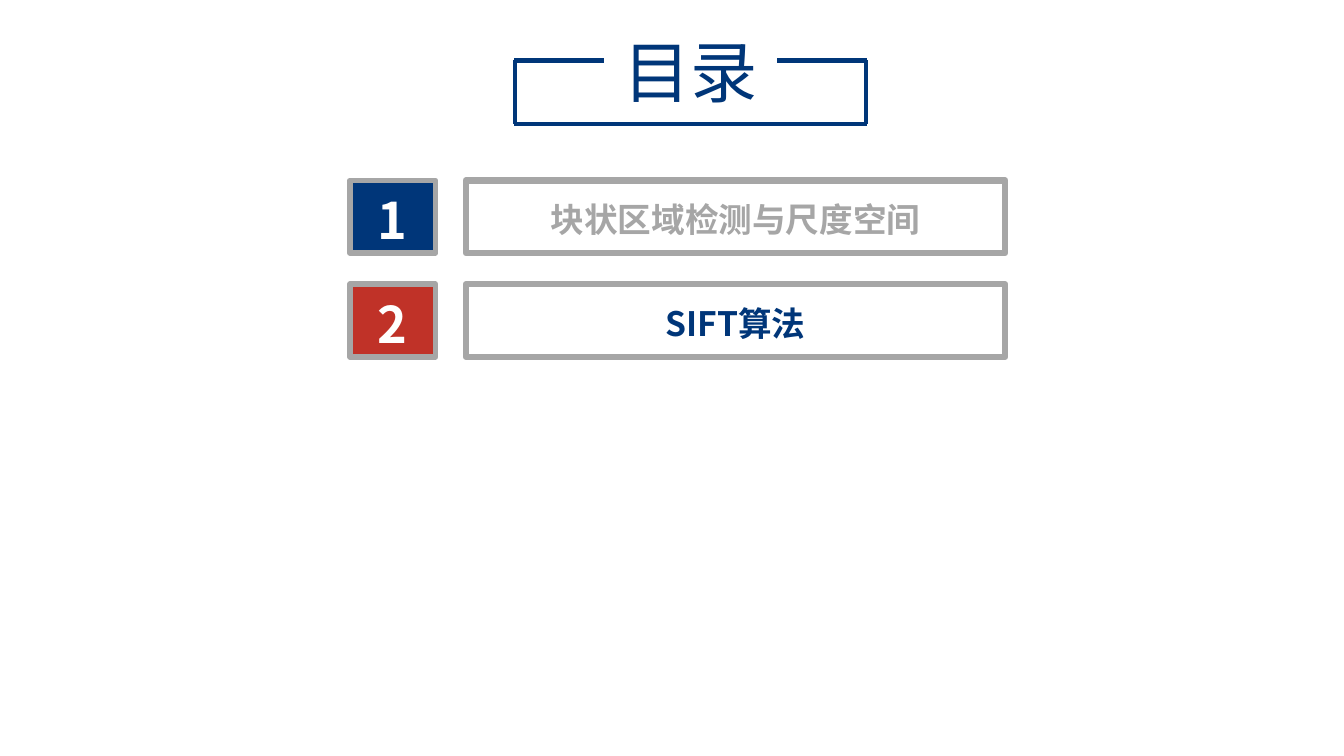
from pptx import Presentation
from pptx.dml.color import RGBColor
from pptx.enum.shapes import MSO_CONNECTOR, MSO_SHAPE
from pptx.enum.text import MSO_ANCHOR, PP_ALIGN
from pptx.oxml.ns import qn
from pptx.util import Pt

PX = 9144
FONT = "Noto Sans CJK SC"
NAVY = RGBColor(0x00, 0x36, 0x79)
RED = RGBColor(0xC0, 0x32, 0x28)
GRAY = RGBColor(0xA6, 0xA6, 0xA6)
WHITE = RGBColor(0xFF, 0xFF, 0xFF)
RECT = MSO_SHAPE.RECTANGLE
STRAIGHT = MSO_CONNECTOR.STRAIGHT
CENTER = PP_ALIGN.CENTER
MIDDLE = MSO_ANCHOR.MIDDLE

ENTRIES = [
    ("1", "块状区域检测与尺度空间", NAVY, GRAY),
    ("2", "SIFT算法", RED, NAVY),
]


def px(*lengths):
    """Turn pixel lengths into EMU."""
    return [n * PX for n in lengths]


def write(sp, text, size, color, bold=False, spacing=1.0):
    """Fill a shape with one centred line of text."""
    tf = sp.text_frame
    tf.word_wrap = True
    tf.vertical_anchor = MIDDLE
    tf.margin_top = tf.margin_bottom = 0
    p = tf.paragraphs[0]
    p.alignment = CENTER
    p.line_spacing = spacing
    r = p.add_run()
    r.text = text
    r.font.size = Pt(size)
    r.font.bold = bold
    r.font.color.rgb = color
    r.font.name = FONT
    ea = r.font._element.makeelement(qn("a:ea"), {"typeface": FONT})
    r.font._element.append(ea)


def add_frame(s, x, y, w, h, weight, fill=None):
    """Draw a grey-bordered rectangle, hollow unless a fill is given."""
    sp = s.shapes.add_shape(RECT, *px(x, y, w, h))
    sp.shadow.inherit = False
    if fill is None:
        sp.fill.background()
    else:
        sp.fill.solid()
        sp.fill.fore_color.rgb = fill
    sp.line.color.rgb = GRAY
    sp.line.width = Pt(weight)
    return sp


def add_rule(s, x1, y1, x2, y2):
    """Draw one stroke of the heading bracket."""
    line = s.shapes.add_connector(STRAIGHT, *px(x1, y1, x2, y2))
    line.line.color.rgb = NAVY
    line.line.width = Pt(3)
    sp_pr = line._element.spPr
    sp_pr.append(sp_pr.makeelement(qn("a:effectLst"), {}))


def add_heading(s, x, y, w, h):
    """Place the title in a box whose top edge is open behind the text."""
    title_w, title_h, stub = 204, 91, 89
    right, bottom = x + w, y + h
    tb = s.shapes.add_textbox(*px(x + (w - title_w) // 2, y - 35, title_w, title_h))
    write(tb, "目录", 48, NAVY)
    add_rule(s, x, y, x + stub, y)
    add_rule(s, right - stub, y, right, y)
    add_rule(s, x, bottom, right, bottom)
    for side in (x + 1, right - 1):
        add_rule(s, side, y, side, bottom)


def add_entry(s, x, y, w, h, number, label, fill, color):
    """Place a numbered tile and its framed label side by side."""
    tile_w, gap, inset = 85, 30, 10
    label_x, label_w = x + tile_w + gap, w - tile_w - gap
    tile = add_frame(s, x, y, tile_w, h, 4, fill)
    write(tile, number, 36, WHITE, bold=True, spacing=1.1)
    add_frame(s, label_x, y, label_w, h, 4.5)
    tb = s.shapes.add_textbox(*px(label_x, y + inset, label_w, h - 2 * inset))
    write(tb, label, 24, color, bold=True, spacing=1.1)


def main():
    """Build the contents slide."""
    prs = Presentation()
    prs.slide_width, prs.slide_height = px(1333, 750)
    s = prs.slides.add_slide(prs.slide_layouts[6])
    add_heading(s, 510, 60, 350, 63)
    for i, entry in enumerate(ENTRIES):
        add_entry(s, 347, 179 + 103 * i, 650, 72, *entry)
    prs.save("out.pptx")


if __name__ == "__main__":
    main()
